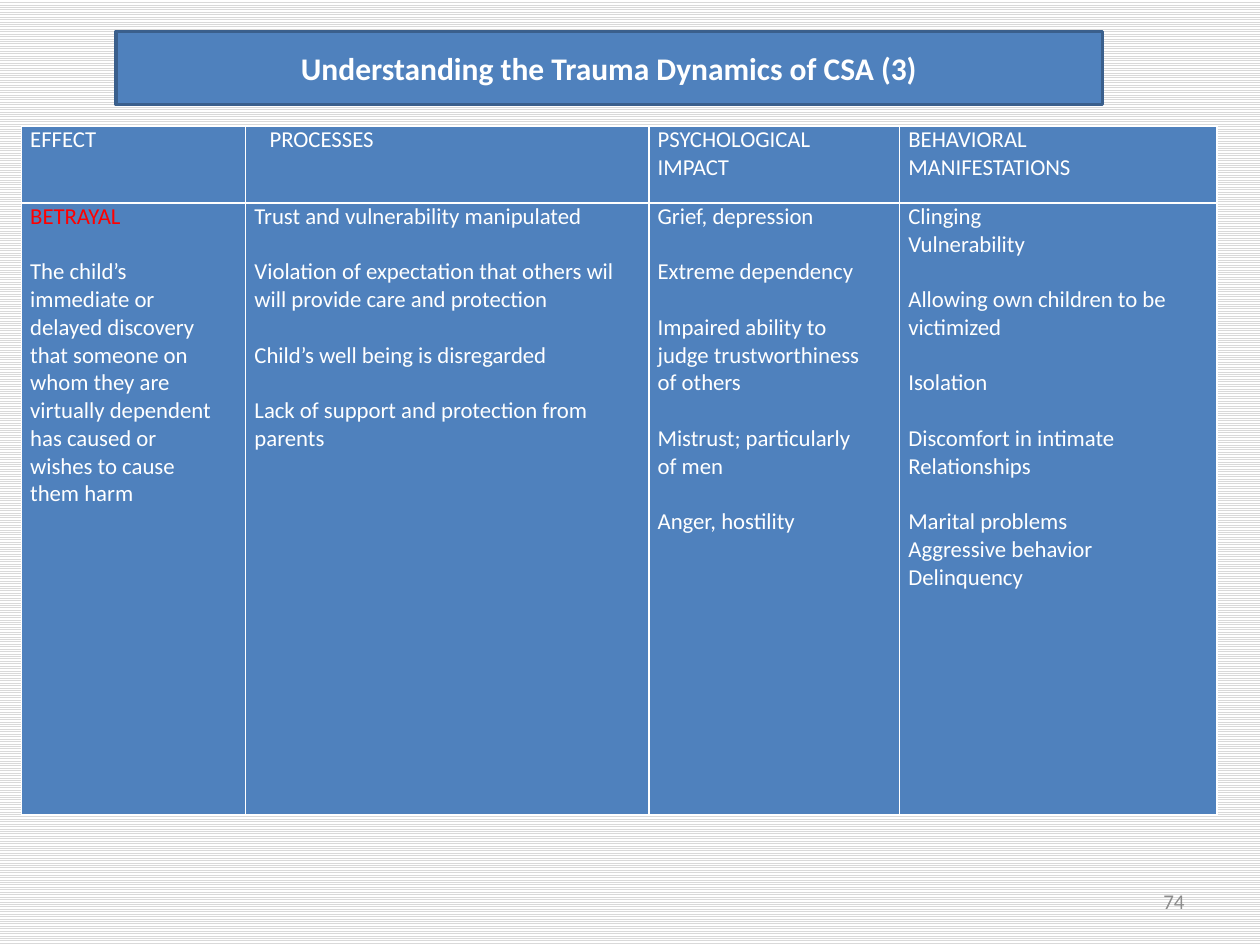
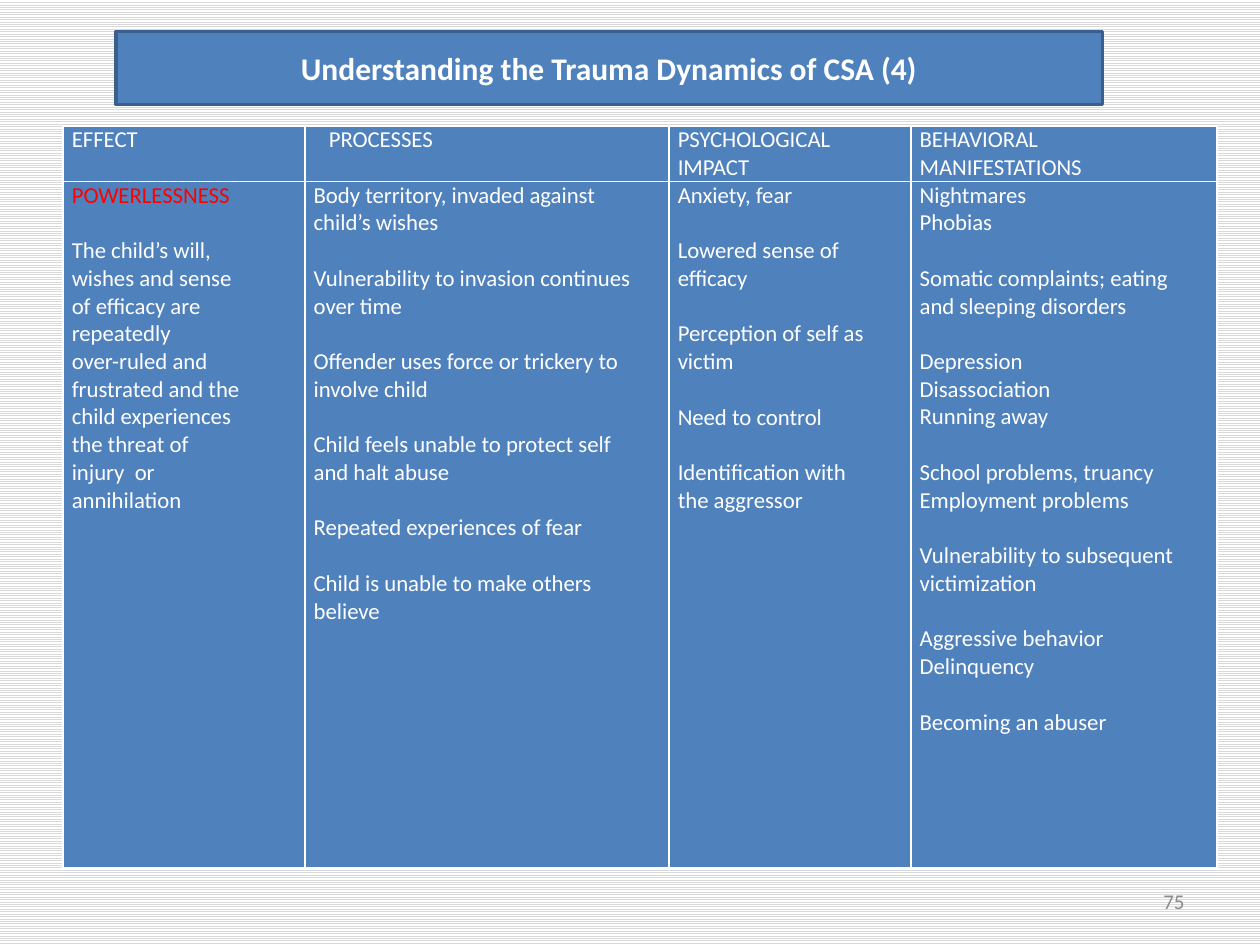
from dataclasses import dataclass
from pptx import Presentation
from pptx.dml.color import RGBColor as RGB
from pptx.enum.dml import MSO_PATTERN as Pattern
from pptx.enum.shapes import MSO_SHAPE as Shape
from pptx.enum.text import MSO_ANCHOR as Anchor, PP_ALIGN as Align
from pptx.util import Inches, Pt


@dataclass(frozen=True)
class Theme:
    font: str = "Calibri"
    blue: str = "4F81BD"
    edge: str = "3A5F8C"
    white: str = "FFFFFF"
    red: str = "FF0000"
    grey: str = "8C8C8C"
    stripe: str = "D9D9D9"
    title: float = 18
    body: float = 13
    number: float = 12
    gap: float = 15.87


theme = Theme()

TITLE_BOX = (0.92, 0.25, 7.83, 0.58)
NUMBER_BOX = (7.17, 6.95, 2.33, 0.4)
PAD = 0.07
INDENT = 0.12

HEADS = ["EFFECT", "PROCESSES", "PSYCHOLOGICAL\nIMPACT", "BEHAVIORAL\nMANIFESTATIONS"]

BETRAYAL = [
    ["BETRAYAL",
     "The child’s\nimmediate or\ndelayed discovery\nthat someone on\nwhom they are\n"
     "virtually dependent\nhas caused or\nwishes to cause\nthem harm"],
    ["Trust and vulnerability manipulated",
     "Violation of expectation that others wil\nwill provide care and protection",
     "Child’s well being is disregarded",
     "Lack of support and protection from parents"],
    ["Grief, depression",
     "Extreme dependency",
     "Impaired ability to\njudge trustworthiness\nof others",
     "Mistrust; particularly\nof men",
     "Anger, hostility"],
    ["Clinging\nVulnerability",
     "Allowing own children to be\nvictimized",
     "Isolation",
     "Discomfort in intimate\nRelationships",
     "Marital problems\nAggressive behavior\nDelinquency"],
]

POWER = [
    ["POWERLESSNESS",
     "The child’s will,\nwishes and sense\nof efficacy are\nrepeatedly\nover-ruled and\n"
     "frustrated and the\nchild experiences\nthe threat of\ninjury  or\nannihilation"],
    ["Body territory, invaded against\nchild’s wishes",
     "Vulnerability to invasion continues\nover time",
     "Offender uses force or trickery to\ninvolve child",
     "Child feels unable to protect self\nand halt abuse",
     "Repeated experiences of fear",
     "Child is unable to make others\nbelieve"],
    ["Anxiety, fear",
     "Lowered sense of\nefficacy",
     "Perception of self as\nvictim",
     "Need to control",
     "Identification with\nthe aggressor"],
    ["Nightmares\nPhobias",
     "Somatic complaints; eating\nand sleeping disorders",
     "Depression\nDisassociation\nRunning away",
     "School problems, truancy\nEmployment problems",
     "Vulnerability to subsequent\nvictimization",
     "Aggressive behavior\nDelinquency",
     "Becoming an abuser"],
]


def style(para, size, color, bold=False):
    for run in para.runs:
        font = run.font
        font.name, font.size, font.bold = theme.font, Pt(size), bold
        font.color.rgb = RGB.from_string(color)


def paint(fill, color):
    fill.solid()
    fill.fore_color.rgb = RGB.from_string(color)


def add_back(slide):
    fill = slide.background.fill
    fill.patterned()
    fill.pattern = Pattern.LIGHT_HORIZONTAL
    fill.fore_color.rgb = RGB.from_string(theme.stripe)
    fill.back_color.rgb = RGB.from_string(theme.white)


def add_title(slide, box, text):
    bar = slide.shapes.add_shape(Shape.RECTANGLE, *map(Inches, box))
    bar.shadow.inherit = False
    paint(bar.fill, theme.blue)
    bar.line.color.rgb = RGB.from_string(theme.edge)
    bar.line.width = Pt(2)
    frame = bar.text_frame
    frame.text = text
    frame.vertical_anchor = Anchor.MIDDLE
    para = frame.paragraphs[0]
    para.alignment = Align.CENTER
    style(para, theme.title, theme.white, True)


def add_number(slide, box, number):
    frame = slide.shapes.add_textbox(*map(Inches, box)).text_frame
    frame.word_wrap = True
    frame.text = str(number)
    frame.vertical_anchor = Anchor.MIDDLE
    para = frame.paragraphs[0]
    para.alignment = Align.RIGHT
    style(para, theme.number, theme.grey)


def fill_cell(cell, groups):
    paint(cell.fill, theme.blue)
    cell.margin_left = cell.margin_right = Inches(PAD)
    cell.margin_top = cell.margin_bottom = 0
    frame = cell.text_frame
    frame.text = "\n".join(groups)
    for para in frame.paragraphs:
        style(para, theme.body, theme.white)
    start = 0
    for group in groups[:-1]:
        start += len(group.split("\n"))
        frame.paragraphs[start].space_before = Pt(theme.gap)


def add_grid(slide, left, top, widths, heights, body):
    box = (left, top, sum(widths), sum(heights))
    table = slide.shapes.add_table(2, len(widths), *map(Inches, box)).table
    table.horz_banding = False
    for row, height in zip(table.rows, heights):
        row.height = Inches(height)
    for col, (width, head, groups) in enumerate(zip(widths, HEADS, body)):
        table.columns[col].width = Inches(width)
        fill_cell(table.cell(0, col), [head])
        fill_cell(table.cell(1, col), groups)
    table.cell(0, 1).margin_left = Inches(PAD + INDENT)
    style(table.cell(1, 0).text_frame.paragraphs[0], theme.body, theme.red)


def add_page(deck, part, number, left, widths, heights, body):
    slide = deck.slides.add_slide(deck.slide_layouts[6])
    add_back(slide)
    add_grid(slide, left, 1, widths, heights, body)
    add_title(slide, TITLE_BOX, f"Understanding the Trauma Dynamics of CSA ({part})")
    add_number(slide, NUMBER_BOX, number)


def main():
    deck = Presentation()
    deck.slide_width, deck.slide_height = Inches(10), Inches(7.5)
    add_page(deck, 3, 74, 0.17, [1.78, 3.2, 1.99, 2.52], [0.61, 4.86], BETRAYAL)
    add_page(deck, 4, 75, 0.5, [1.92, 2.89, 1.92, 2.43], [0.44, 5.45], POWER)
    deck.save("out.pptx")


if __name__ == "__main__":
    main()
